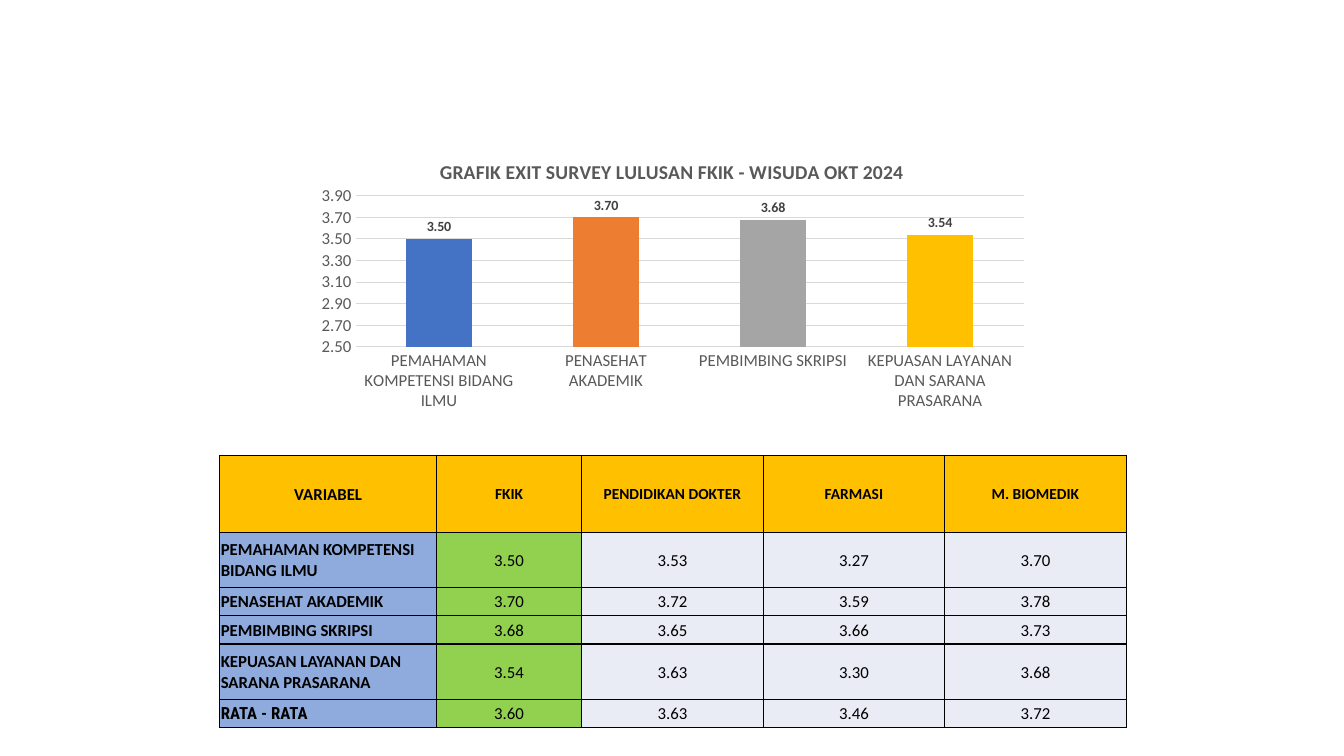
from lxml.etree import SubElement as Sub
from pptx import Presentation
from pptx.chart.data import CategoryChartData as Data
from pptx.dml.color import RGBColor as RGB
from pptx.enum.chart import XL_CHART_TYPE as Kind, XL_LABEL_POSITION as Spot, XL_TICK_MARK as Tick
from pptx.enum.text import MSO_ANCHOR as Anchor, PP_ALIGN as Align
from pptx.oxml import parse_xml
from pptx.oxml.ns import nsdecls, qn
from pptx.util import Inches, Pt


def color(code):
    return RGB.from_string(code)


def write(frame, text, size=12, bold=False, ink="000000", face="Calibri", align=Align.CENTER):
    para = frame.paragraphs[0]
    para.alignment = align
    run = para.add_run()
    run.text = text
    font = run.font
    font.size, font.bold, font.name = Pt(size), bold, face
    font.color.rgb = color(ink)


deck = Presentation()
deck.slide_width, deck.slide_height = Inches(13.33), Inches(7.5)
slide = deck.slides.add_slide(deck.slide_layouts[6])

heads = ["VARIABEL", "FKIK", "PENDIDIKAN DOKTER", "FARMASI", "M. BIOMEDIK"]
topics = [
    ("PEMAHAMAN KOMPETENSI BIDANG ILMU", 3.50, 3.53, 3.27, 3.70),
    ("PENASEHAT AKADEMIK", 3.70, 3.72, 3.59, 3.78),
    ("PEMBIMBING SKRIPSI", 3.68, 3.65, 3.66, 3.73),
    ("KEPUASAN LAYANAN DAN SARANA PRASARANA", 3.54, 3.63, 3.30, 3.68),
]
mean = ("RATA - RATA", 3.60, 3.63, 3.46, 3.72)

data = Data(number_format="0.00")
data.categories = [topic[0] for topic in topics]
data.add_series("Series 1", [topic[1] for topic in topics])
chart = slide.shapes.add_chart(
    Kind.COLUMN_CLUSTERED, Inches(3.04), Inches(1.43), Inches(7.25), Inches(2.7), data).chart
chart.has_legend = False
chart.font.size, chart.font.name = Pt(10), "Calibri"
chart.has_title = True
write(chart.chart_title.text_frame, "GRAFIK EXIT SURVEY LULUSAN FKIK - WISUDA OKT 2024",
      size=14, bold=True, ink="595959")
chart.chart_title.include_in_layout = False

for axis in (chart.category_axis, chart.value_axis):
    axis.major_tick_mark = axis.minor_tick_mark = Tick.NONE
    axis.format.line.fill.background()
    font = axis.tick_labels.font
    font.size, font.name = Pt(12), "Calibri"
    font.color.rgb = color("595959")
scale = chart.value_axis
scale.minimum_scale, scale.maximum_scale, scale.major_unit = 2.5, 3.9, 0.2
scale.tick_labels.number_format = "0.00"
scale.tick_labels.number_format_is_linked = False
grid = scale.major_gridlines.format.line
grid.width = Pt(0.75)
grid.color.rgb = color("D9D9D9")

plot = chart.plots[0]
plot.gap_width = 150
plot.vary_by_categories = False
bars = plot.series[0]
for spot, code in enumerate(["4472C4", "ED7D31", "A5A5A5", "FFC000"]):
    fill = bars.points[spot].format.fill
    fill.solid()
    fill.fore_color.rgb = color(code)
labels = bars.data_labels
labels.show_value = True
labels.position = Spot.OUTSIDE_END
labels.number_format = "0.00"
labels.number_format_is_linked = False
labels.font.size, labels.font.bold, labels.font.name = Pt(10), True, "Calibri"
labels.font.color.rgb = color("404040")

area = chart.element.find(".//" + qn("c:plotArea"))
for old in area.findall(qn("c:layout")):
    area.remove(old)
layout = parse_xml(f"<c:layout {nsdecls('c')}/>")
area.insert(0, layout)
place = Sub(layout, qn("c:manualLayout"))
for tag, value in [("layoutTarget", "inner"), ("xMode", "edge"), ("yMode", "edge"),
                   ("x", "0.067"), ("y", "0.19"), ("w", "0.914"), ("h", "0.555")]:
    Sub(place, qn("c:" + tag), val=value)

wide = [2.15, 1.44, 1.8, 1.8, 1.8]
high = [0.76, 0.55, 0.28, 0.28, 0.55, 0.28]
table = slide.shapes.add_table(
    len(high), len(wide), Inches(2.18), Inches(4.52), Inches(sum(wide)), Inches(sum(high))).table
table.horz_banding = False
for col, width in zip(table.columns, wide):
    col.width = Inches(width)
for row, height in zip(table.rows, high):
    row.height = Inches(height)

fills = ["8FAADC", "92D050"] + ["E9EBF5"] * 3
for r, line in enumerate([heads, *topics, mean]):
    for c, item in enumerate(line):
        cell = table.cell(r, c)
        cell.vertical_anchor = Anchor.MIDDLE
        cell.margin_left = cell.margin_right = cell.margin_top = Inches(0.01)
        cell.margin_bottom = 0
        write(cell.text_frame, item if isinstance(item, str) else f"{item:.2f}",
              size=11 if r == 0 and c else 12, bold=r == 0 or c == 0,
              face="Roboto Condensed" if item == mean[0] else "Calibri",
              align=Align.LEFT if r and c == 0 else Align.CENTER)
        props = cell._tc.get_or_add_tcPr()
        for side in ("lnL", "lnR", "lnT", "lnB"):
            edge = Sub(props, qn("a:" + side), w=str(Pt(1)))
            Sub(Sub(edge, qn("a:solidFill")), qn("a:srgbClr"), val="000000")
        cell.fill.solid()
        cell.fill.fore_color.rgb = color(fills[c] if r else "FFC000")

deck.save("out.pptx")
